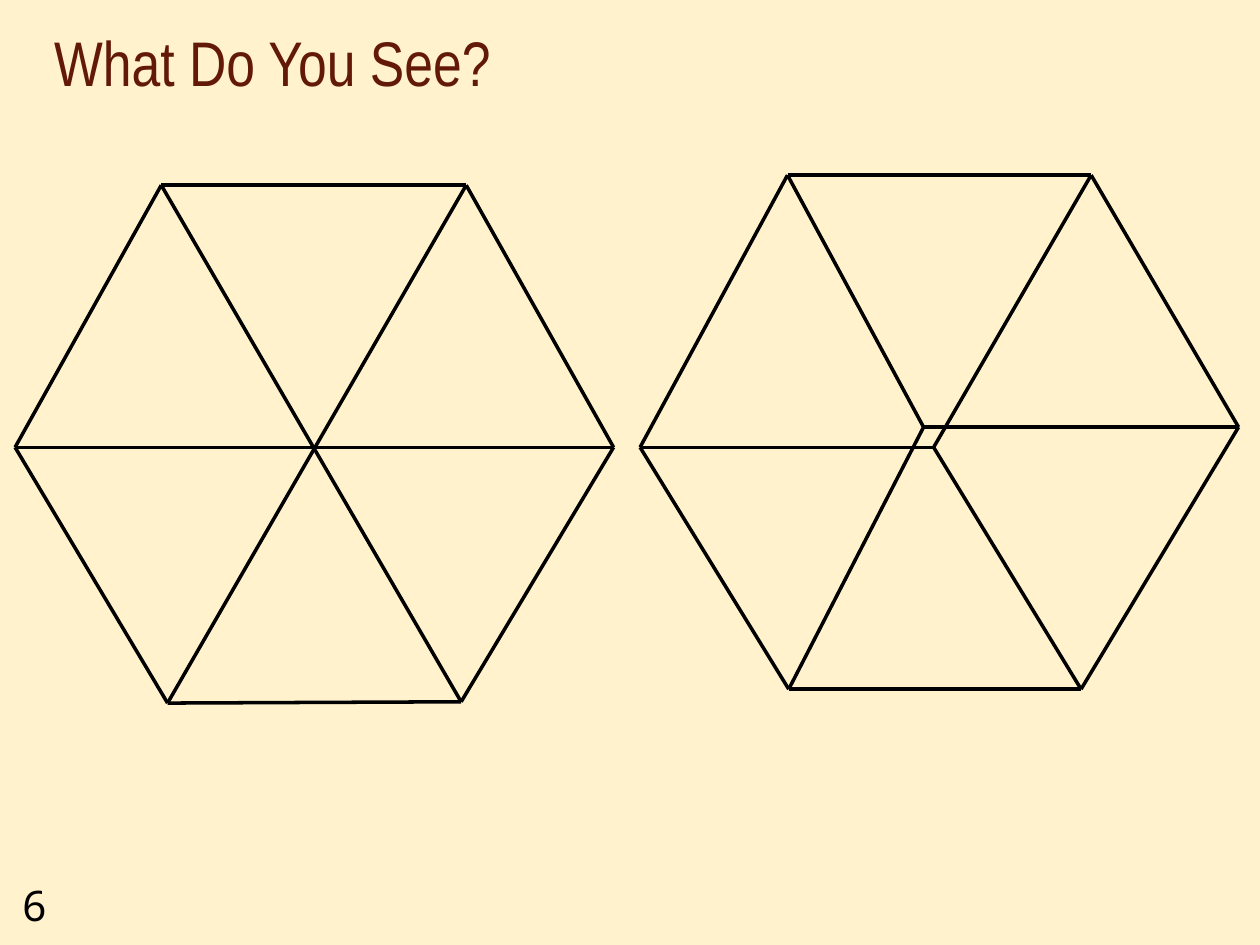
from dataclasses import dataclass

from lxml import etree
from pptx import Presentation
from pptx.dml.color import RGBColor
from pptx.enum import shapes, text
from pptx.oxml.ns import qn
from pptx.util import Inches, Pt

CREAM = RGBColor(0xFF, 0xF2, 0xCC)
BROWN = RGBColor(0x63, 0x19, 0x08)
BLACK = RGBColor(0, 0, 0)

Point = tuple[float, float]


@dataclass
class Figure:
    """Named corners in inches, and the pairs of corners joined by lines."""
    points: dict[str, Point]
    edges: list[str]


OUTLINE = ["AB", "BC", "CD", "DE", "EF", "FA"]

# Corners run clockwise from the left: A left, B-C top, D right, E-F bottom
FLAT_HEXAGON = Figure(
    {"A": (0.12, 3.55), "B": (1.28, 1.47), "C": (3.7, 1.47),
     "D": (4.87, 3.55), "E": (3.66, 5.57), "F": (1.33, 5.58)},
    OUTLINE + ["AD", "BE", "CF"],
)

# Inner corners P and Q are where the cube's hidden and near edges meet
OFFSET_CUBE = Figure(
    {"A": (5.08, 3.55), "B": (6.25, 1.39), "C": (8.66, 1.39),
     "D": (9.83, 3.39), "E": (8.58, 5.47), "F": (6.26, 5.47),
     "P": (7.33, 3.39), "Q": (7.41, 3.55)},
    OUTLINE + ["BP", "FP", "DP", "AQ", "CQ", "EQ"],
)


def draw_figure(slide, figure: Figure) -> None:
    group = slide.shapes.add_group_shape()
    for start, end in figure.edges:
        ends = figure.points[start] + figure.points[end]
        line = group.shapes.add_connector(
            shapes.MSO_CONNECTOR.STRAIGHT, *(Inches(v) for v in ends))
        line.line.color.rgb = BLACK
        line.line.width = Pt(2)
        etree.SubElement(line._element.spPr, qn("a:effectLst"))


def write(sp, words: str, font: str, size: int, color: RGBColor) -> None:
    tf = sp.text_frame
    tf.text = words
    tf.word_wrap = True
    p = tf.paragraphs[0]
    p.alignment = text.PP_ALIGN.LEFT
    r = p.runs[0]
    r.font.name = font
    r.font.size = Pt(size)
    r.font.color.rgb = color


def main() -> None:
    prs = Presentation()
    prs.slide_width, prs.slide_height = Inches(10), Inches(7.5)
    s = prs.slides.add_slide(prs.slide_layouts[5])
    s.background.fill.solid()
    s.background.fill.fore_color.rgb = CREAM

    # Title
    title = s.shapes.title
    title.left, title.top = Inches(0.33), Inches(0.17)
    title.width, title.height = Inches(8.5), Inches(0.67)
    write(title, "What Do You See?", "Arial Narrow", 36, BROWN)
    title.text_frame.vertical_anchor = text.MSO_ANCHOR.BOTTOM
    title.text_frame.auto_size = text.MSO_AUTO_SIZE.NONE

    # Slide number
    number = s.shapes.add_textbox(
        Inches(0.08), Inches(6.93), Inches(0.75), Inches(0.5))
    write(number, "6", "Noto Sans", 24, BLACK)

    # Figures
    for figure in (FLAT_HEXAGON, OFFSET_CUBE):
        draw_figure(s, figure)

    prs.save("out.pptx")


if __name__ == "__main__":
    main()
